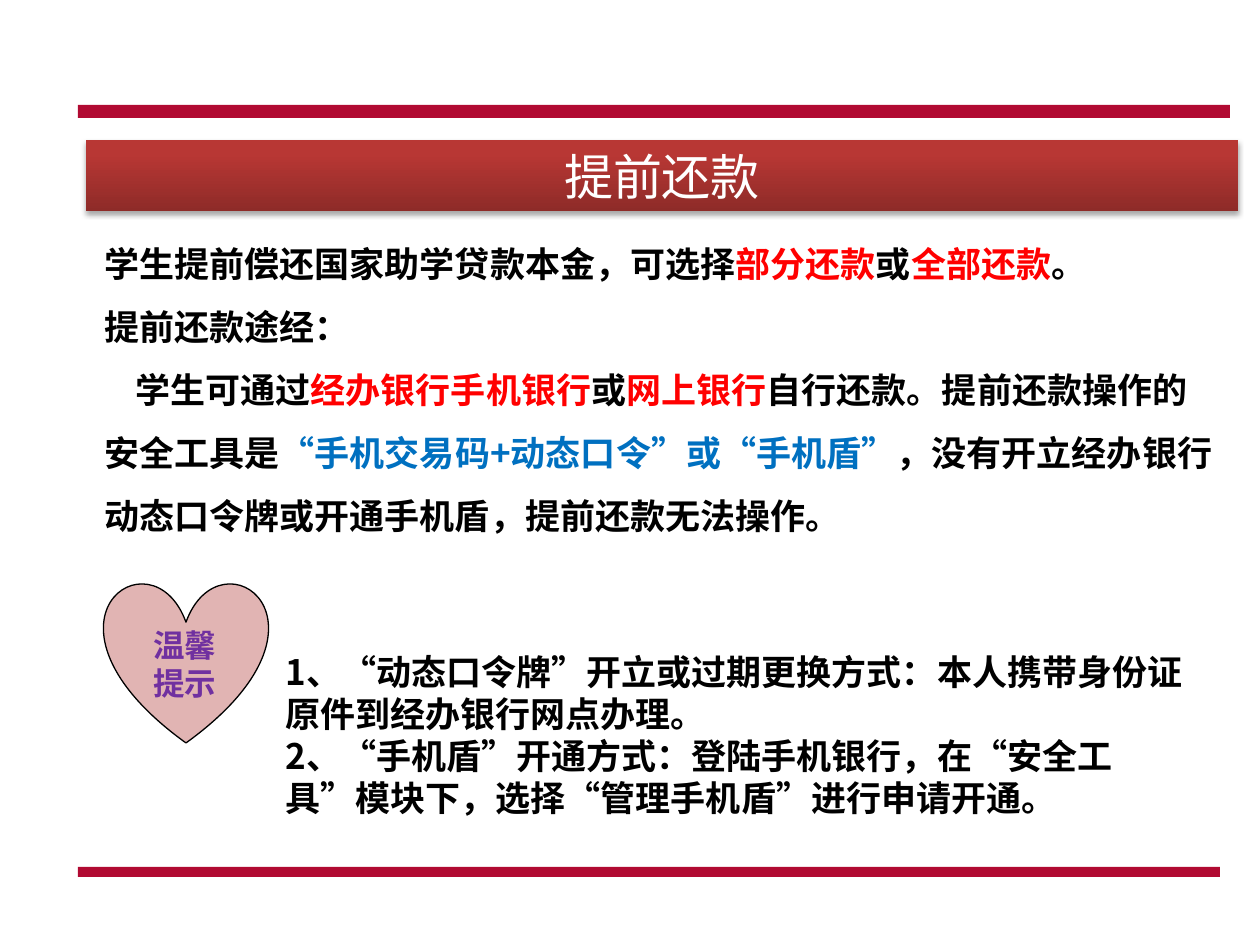
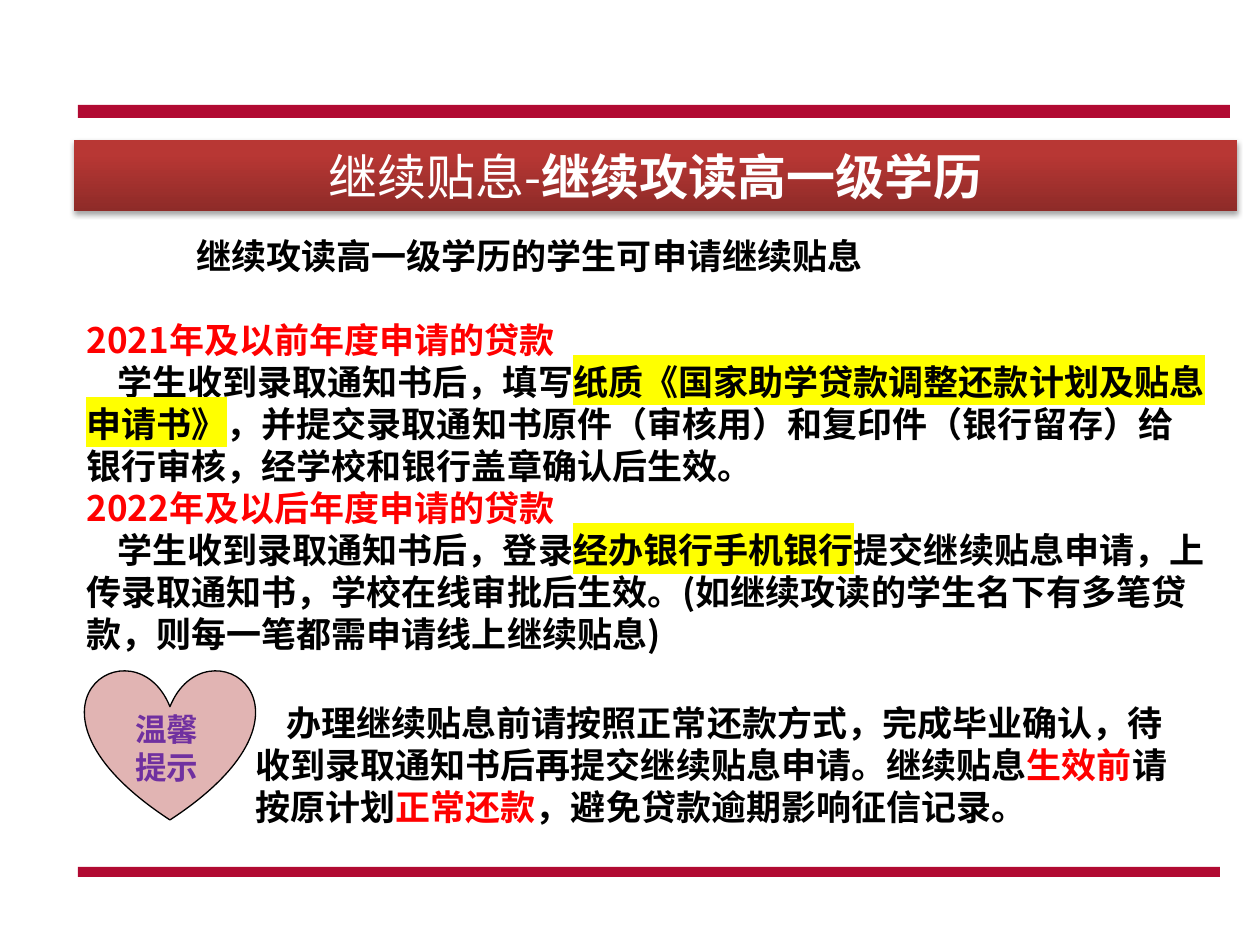
from dataclasses import dataclass

import pptx
import pptx.dml.color
import pptx.enum.shapes
import pptx.enum.text
import pptx.oxml
import pptx.oxml.ns
import pptx.util
from lxml import etree

EMU_PER_PX = 914400 / 126
INDENT = 31  # first-line indent of a body paragraph, px


@dataclass(frozen=True)
class Theme:
    rule: str = "B10A32"
    banner_stops: tuple = ((0, "8E2B28"), (80, "B83734"), (100, "BB3531"))
    banner_text: str = "FFFFFF"
    text: str = "000000"
    red: str = "FF0000"
    blue: str = "0070C0"
    highlight: str = "FFFF00"
    heart: str = "E1B4B3"
    heart_label: str = "7030A0"
    font: str = "Noto Sans CJK SC"
    label_font: str = "Arial"
    title_size: int = 28
    body_size: int = 20
    label_size: int = 18
    leading: float = 1.2


THEME = Theme()


def px(length):
    return pptx.util.Emu(round(length * EMU_PER_PX))


def rgb(value):
    return pptx.dml.color.RGBColor.from_string(value)


def red(text):
    return text, THEME.red, None


def blue(text):
    return text, THEME.blue, None


def marked(text):
    return text, THEME.text, THEME.highlight


def add_runs(paragraph, pieces):
    """Add plain strings and (text, colour, highlight) pieces as runs."""
    for piece in pieces:
        run = paragraph.add_run()
        if isinstance(piece, str):
            run.text = piece
            continue
        run.text, color, highlight = piece
        run.font.color.rgb = rgb(color)
        if highlight:
            mark = etree.SubElement(run.font._rPr, pptx.oxml.ns.qn("a:highlight"))
            etree.SubElement(mark, pptx.oxml.ns.qn("a:srgbClr"), val=highlight)


def style_paragraph(paragraph, size, color, bold, font=THEME.font):
    paragraph.font.size = pptx.util.Pt(size)
    paragraph.font.bold = bold
    paragraph.font.color.rgb = rgb(color)
    paragraph.font.name = font
    etree.SubElement(paragraph.font._rPr, pptx.oxml.ns.qn("a:ea"), typeface=THEME.font)


def add_preset(slide, kind, box, fill, line=None):
    shape = slide.shapes.add_shape(kind, *map(px, box))
    shape.shadow.inherit = False
    shape.fill.solid()
    shape.fill.fore_color.rgb = rgb(fill)
    if line:
        shape.line.color.rgb = rgb(line)
        shape.line.width = pptx.util.Pt(0.75)
    else:
        shape.line.fill.background()


def add_text(slide, box, paragraphs, spacing=1, size=THEME.body_size,
             color=THEME.text, font=THEME.font):
    """Add a text box from (indent px, space before pt, pieces) paragraphs."""
    frame = slide.shapes.add_textbox(*map(px, box)).text_frame
    frame.word_wrap = True
    for number, (indent, space_before, pieces) in enumerate(paragraphs):
        paragraph = frame.add_paragraph() if number else frame.paragraphs[0]
        add_runs(paragraph, pieces)
        paragraph.line_spacing = pptx.util.Pt(size * THEME.leading * spacing)
        if space_before:
            paragraph.space_before = pptx.util.Pt(space_before)
        if indent:
            paragraph._p.get_or_add_pPr().set("indent", str(px(indent)))
        style_paragraph(paragraph, size, color, True, font)


def decorate_banner(banner):
    """Give the title its gradient and soft shadow."""
    namespace = pptx.oxml.ns.nsdecls("a")
    stops = "".join(f'<a:gs pos="{pos * 1000}"><a:srgbClr val="{color}"/></a:gs>'
                    for pos, color in THEME.banner_stops)
    gradient = (f'<a:gradFill {namespace} rotWithShape="1"><a:gsLst>{stops}</a:gsLst>'
                '<a:lin ang="16200000" scaled="0"/></a:gradFill>')
    shadow = (f'<a:effectLst {namespace}><a:outerShdw blurRad="39370" dist="22860" '
              'dir="5400000" rotWithShape="0"><a:srgbClr val="000000">'
              '<a:alpha val="35000"/></a:srgbClr></a:outerShdw></a:effectLst>')
    for xml in (gradient, shadow):
        banner._element.spPr.append(pptx.oxml.parse_xml(xml))


def add_slide(deck, banner_left, banner_width, *title_parts):
    """Start a slide with the two rules and a banner of (text, bold) parts."""
    slide = deck.slides.add_slide(deck.slide_layouts[5])
    for rule in ((78, 105, 1152, 13), (78, 867, 1142, 10)):
        add_preset(slide, pptx.enum.shapes.MSO_SHAPE.RECTANGLE, rule, THEME.rule)

    banner = slide.shapes.title
    banner.left, banner.top, banner.width, banner.height = map(
        px, (banner_left, 140, banner_width, 71))
    decorate_banner(banner)
    frame = banner.text_frame
    frame.auto_size = pptx.enum.text.MSO_AUTO_SIZE.NONE
    frame.vertical_anchor = pptx.enum.text.MSO_ANCHOR.MIDDLE
    heading = frame.paragraphs[0]
    heading.alignment = pptx.enum.text.PP_ALIGN.CENTER
    for text, bold in title_parts:
        run = heading.add_run()
        run.text = text
        if bold:
            run.font.bold = True
    style_paragraph(heading, THEME.title_size, THEME.banner_text, False)
    return slide


def add_reminder(slide, heart_box, label_left, label_top):
    add_preset(slide, pptx.enum.shapes.MSO_SHAPE.HEART, heart_box, THEME.heart, THEME.text)
    add_text(slide, (label_left, label_top, 90, 90), [(0, 0, ["温馨提示"])],
             size=THEME.label_size, color=THEME.heart_label, font=THEME.label_font)


def build_early_repayment(deck):
    slide = add_slide(deck, 86, 1152, ("提前还款", False))
    add_text(slide, (92, 215, 1139, 330), [
        (0, 0, ["学生提前偿还国家助学贷款本金，可选择", red("部分还款"), "或",
                red("全部还款"), "。"]),
        (0, 0, ["提前还款途经："]),
        (INDENT, 0, ["学生可通过", red("经办银行手机银行"), "或", red("网上银行"),
                     "自行还款。提前还款操作的安全工具是",
                     blue("“手机交易码+动态口令”或“手机盾”"),
                     "，没有开立经办银行动态口令牌或开通手机盾，提前还款无法操作。"]),
    ], spacing=1.5)
    add_reminder(slide, (104, 582, 164, 161), 141, 620)
    add_text(slide, (273, 644, 934, 183), [
        (0, 0, ["1、“动态口令牌”开立或过期更换方式：本人携带身份证原件到经办银行网点办理。"]),
        (0, 0, ["2、“手机盾”开通方式：登陆手机银行，在“安全工具”模块下，"
                "选择“管理手机盾”进行申请开通。"]),
    ])


def build_continued_subsidy(deck):
    slide = add_slide(deck, 74, 1163, ("继续贴息-", False), ("继续攻读高一级学历", True))
    add_text(slide, (74, 228, 1144, 432), [
        (110, 0, ["继续攻读高一级学历的学生可申请继续贴息"]),
        (0, 24, [red("2021年及以前年度申请的贷款")]),
        (INDENT, 0, ["学生收到录取通知书后，填写",
                     marked("纸质《国家助学贷款调整还款计划及贴息申请书》"),
                     "，并提交录取通知书原件（审核用）和复印件（银行留存）给银行审核，"
                     "经学校和银行盖章确认后生效。"]),
        (0, 0, [red("2022年及以后年度申请的贷款")]),
        (INDENT, 0, ["学生收到录取通知书后，登录", marked("经办银行手机银行"),
                     "提交继续贴息申请，上传录取通知书，学校在线审批后生效。"
                     "(如继续攻读的学生名下有多笔贷款，则每一笔都需申请线上继续贴息)"]),
    ])
    add_reminder(slide, (85, 669, 170, 151), 123, 704)
    add_text(slide, (243, 695, 960, 140), [
        (INDENT, 0, ["办理继续贴息前请按照正常还款方式，完成毕业确认，"
                     "待收到录取通知书后再提交继续贴息申请。继续贴息", red("生效前"),
                     "请按原计划", red("正常还款"), "，避免贷款逾期影响征信记录。"]),
    ])


def main():
    deck = pptx.Presentation()
    deck.slide_width, deck.slide_height = px(1260), px(945)
    build_early_repayment(deck)
    build_continued_subsidy(deck)
    deck.save("out.pptx")


if __name__ == "__main__":
    main()
